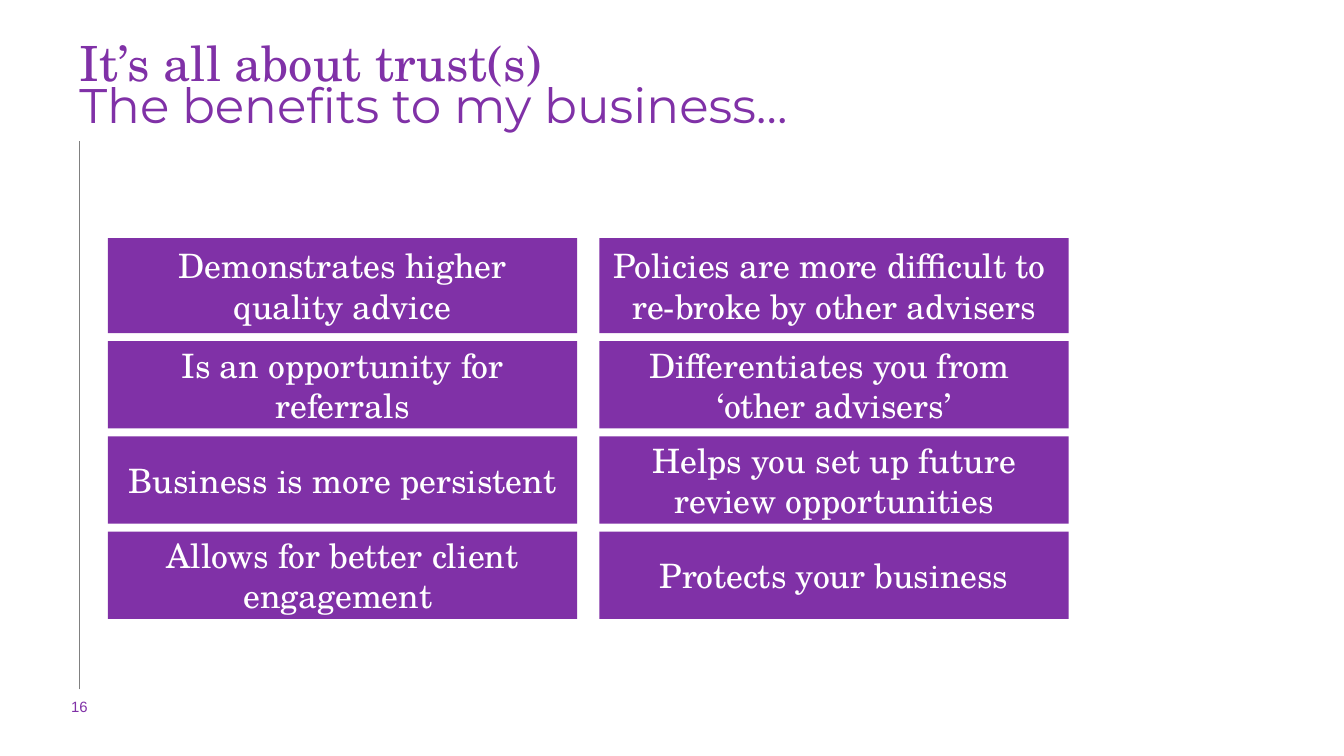
from lxml import etree
from pptx import Presentation
from pptx.dml.color import RGBColor
from pptx.enum.shapes import MSO_CONNECTOR, MSO_SHAPE
from pptx.enum.text import MSO_ANCHOR, PP_ALIGN
from pptx.oxml.ns import qn
from pptx.util import Cm, Pt

PURPLE = RGBColor(0x80, 0x31, 0xA7)
WHITE = RGBColor(0xFF, 0xFF, 0xFF)
GREY = RGBColor(0x80, 0x80, 0x80)
SERIF = "TeX Gyre Schola"
LEFT, CENTER = PP_ALIGN.LEFT, PP_ALIGN.CENTER
TOP, MIDDLE = MSO_ANCHOR.TOP, MSO_ANCHOR.MIDDLE
STRAIGHT = MSO_CONNECTOR.STRAIGHT
RECTANGLE = MSO_SHAPE.RECTANGLE


def format_paragraph(paragraph, font_name, size, color, alignment):
    paragraph.alignment = alignment
    for run in paragraph.runs:
        run.font.name = font_name
        run.font.size = Pt(size)
        run.font.color.rgb = color


def add_text(slide, position, text, font_name, size, alignment, spacing):
    box = slide.shapes.add_textbox(*[Cm(length) for length in position])
    frame = box.text_frame
    frame.margin_left = frame.margin_right = frame.margin_top = frame.margin_bottom = 0
    frame.word_wrap = True
    frame.vertical_anchor = TOP
    frame.text = text
    paragraph = frame.paragraphs[0]
    paragraph.line_spacing = spacing
    format_paragraph(paragraph, font_name, size, PURPLE, alignment)


presentation = Presentation()
presentation.slide_width = Cm(25.4)
presentation.slide_height = Cm(14.29)
slide = presentation.slides.add_slide(presentation.slide_layouts[6])

rule = slide.shapes.add_connector(STRAIGHT, Cm(1.5), Cm(13.03), Cm(1.5), Cm(2.67))
rule.line.color.rgb = GREY
rule.line.width = Pt(0.75)
etree.SubElement(rule._element.spPr, qn("a:effectLst"))

add_text(slide, (0.61, 13.18, 1.78, 0.76), "16", "Arial", 8, CENTER, 1.0)
add_text(slide, (1.5, 0.76, 23.44, 1.22), "It’s all about trust(s)", SERIF, 26, LEFT, 0.88)
add_text(slide, (1.5, 1.63, 23.42, 1.07), "The benefits to my business…", "Montserrat", 26, LEFT, 0.8)

benefits = [
    ("Demonstrates higher quality advice",
     "Policies are more difficult to \nre-broke by other advisers"),
    ("Is an opportunity for referrals",
     "Differentiates you from \n‘other advisers’"),
    ("Business is more persistent",
     "Helps you set up future review opportunities"),
    ("Allows for better client engagement ",
     "Protects your business"),
]
box_width, column_pitch = 8.87, 9.29
row_gap = 0.15
top = 4.5
for row, texts in enumerate(benefits):
    box_height = 1.8 if row == 0 else 1.65
    for column, text in enumerate(texts):
        box = slide.shapes.add_shape(
            RECTANGLE, Cm(2.04 + column * column_pitch), Cm(top), Cm(box_width), Cm(box_height))
        box.shadow.inherit = False
        box.fill.solid()
        box.fill.fore_color.rgb = PURPLE
        box.line.fill.background()
        frame = box.text_frame
        frame.word_wrap = True
        frame.vertical_anchor = MIDDLE
        frame.text = text
        for paragraph in frame.paragraphs:
            format_paragraph(paragraph, SERIF, 18, WHITE, CENTER)
    top += box_height + row_gap

presentation.save("out.pptx")
